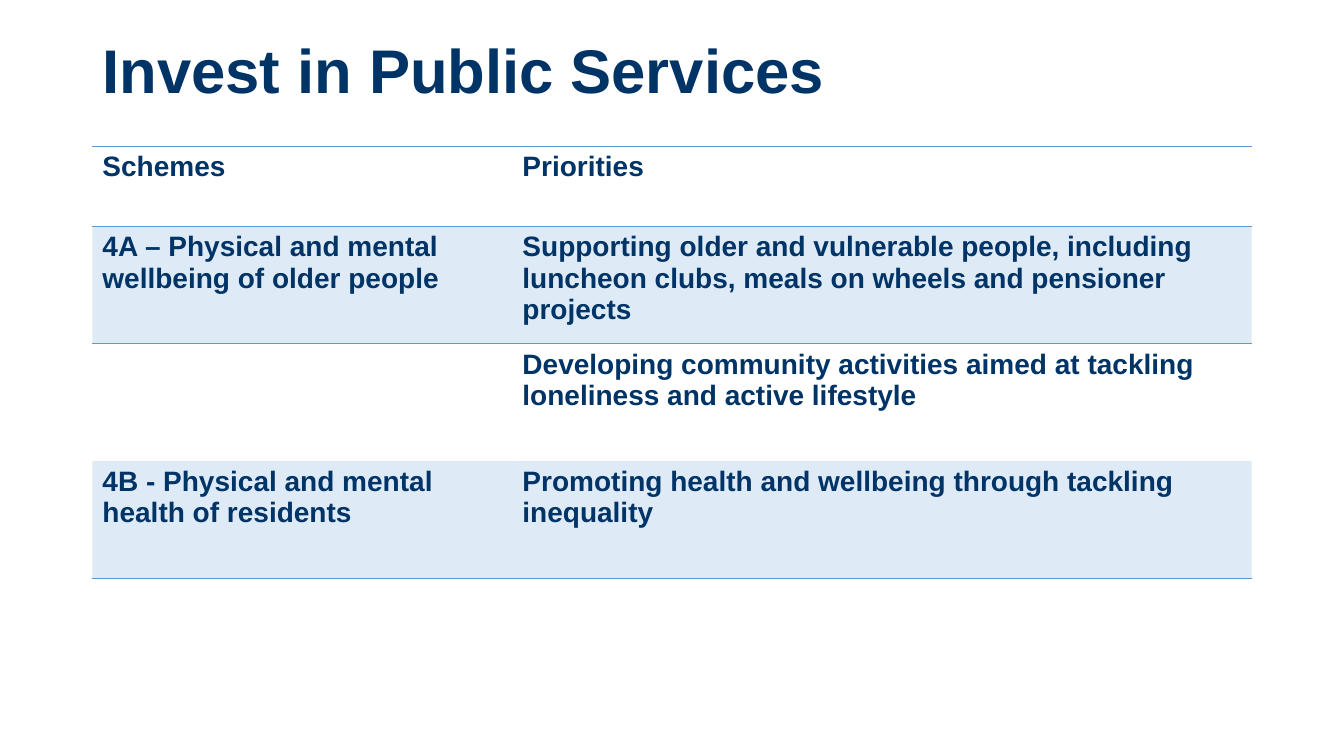
from dataclasses import dataclass

from lxml.etree import SubElement
from pptx import Presentation
from pptx.dml.color import RGBColor
from pptx.enum.text import MSO_ANCHOR, PP_ALIGN
from pptx.oxml import parse_xml
from pptx.oxml.ns import nsdecls, qn
from pptx.table import _Cell
from pptx.text.text import TextFrame
from pptx.util import Pt

COLORS = {"navy": "003366", "blue": "5B9BD5"}
NO_STYLE = "{2D5ABB26-0587-4C30-8999-92F81FD0307C}"
LEFT = 66
COL_WIDTHS = (300, 528)


@dataclass
class Row:
    scheme: str
    priority: str
    height: float = 83.8
    shaded: bool = False
    borders: tuple[str, ...] = ()


ROWS = [
    Row("Schemes", "Priorities", height=57.4, borders=("lnT", "lnB")),
    Row("4A – Physical and mental wellbeing of older people",
        "Supporting older and vulnerable people, including luncheon clubs, "
        "meals on wheels and pensioner projects", shaded=True, borders=("lnT",)),
    Row("", "Developing community activities aimed at tackling loneliness "
        "and active lifestyle"),
    Row("4B - Physical and mental health of residents",
        "Promoting health and wellbeing through tackling inequality",
        shaded=True, borders=("lnB",)),
]


def write(tf: TextFrame, text: str, *, size: float, color: str = "navy",
          bold: bool = True, spacing: float = 1.0) -> None:
    p = tf.paragraphs[0]
    p.alignment = PP_ALIGN.LEFT
    p.line_spacing = spacing
    if text:
        r = p.add_run()
        r.text = text
        r.font.name = "Arial"
        r.font.size = Pt(size)
        r.font.bold = bold
        r.font.color.rgb = RGBColor.from_string(COLORS[color])


def shade(cell: _Cell, color: str, alpha: int) -> None:
    cell.fill.solid()
    cell.fill.fore_color.rgb = RGBColor.from_string(COLORS[color])
    clr = cell._tc.tcPr.find(f"{qn('a:solidFill')}/{qn('a:srgbClr')}")
    SubElement(clr, qn("a:alpha")).set("val", str(alpha * 1000))


def add_borders(cell: _Cell, sides: tuple[str, ...], color: str) -> None:
    for i, side in enumerate(sides):
        cell._tc.tcPr.insert(i, parse_xml(
            f'<a:{side} {nsdecls("a")} w="{Pt(1)}"><a:solidFill>'
            f'<a:srgbClr val="{COLORS[color]}"/></a:solidFill></a:{side}>'))


def fill_cell(cell: _Cell, text: str, row: Row) -> None:
    write(cell.text_frame, text, size=20)
    if row.shaded:
        shade(cell, "blue", 20)
    else:
        cell.fill.background()
    add_borders(cell, row.borders, "blue")


def main() -> None:
    prs = Presentation()
    prs.slide_width, prs.slide_height = Pt(960), Pt(540)
    s = prs.slides.add_slide(prs.slide_layouts[5])

    title = s.shapes.title
    title.left, title.top, title.width, title.height = Pt(LEFT), Pt(0), Pt(770), Pt(104.4)
    title.text_frame.vertical_anchor = MSO_ANCHOR.MIDDLE
    write(title.text_frame, "Invest in Public Services", size=44, spacing=0.9)

    table = s.shapes.add_table(
        len(ROWS), len(COL_WIDTHS), Pt(LEFT), Pt(104.4), Pt(sum(COL_WIDTHS)),
        Pt(sum(row.height for row in ROWS))).table
    table.first_row = table.horz_banding = False
    table._tbl.tblPr.find(qn("a:tableStyleId")).text = NO_STYLE
    for col, width in zip(table.columns, COL_WIDTHS):
        col.width = Pt(width)
    for i, row in enumerate(ROWS):
        table.rows[i].height = Pt(row.height)
        for j, text in enumerate((row.scheme, row.priority)):
            fill_cell(table.cell(i, j), text, row)

    prs.save("out.pptx")


if __name__ == "__main__":
    main()
